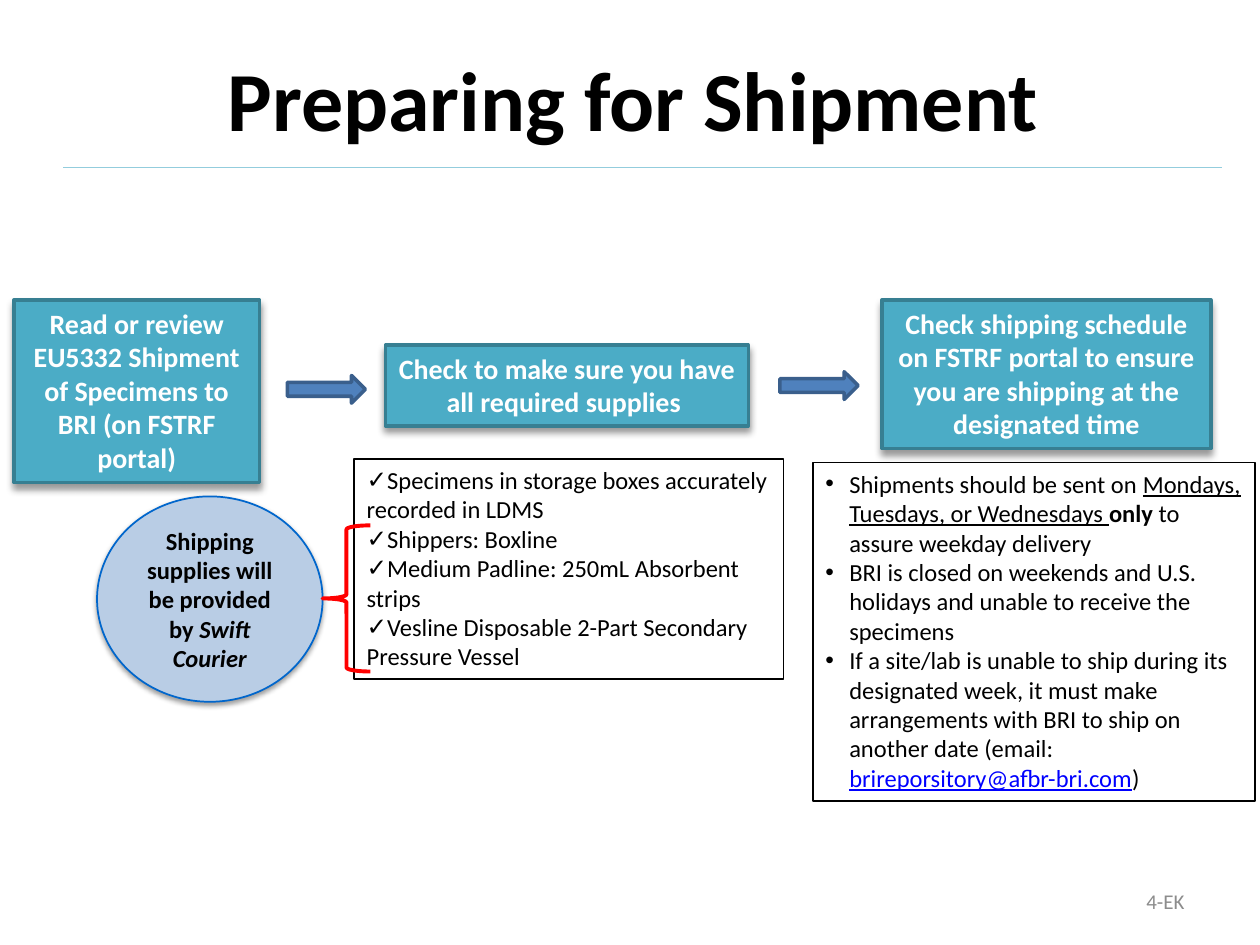
from lxml.etree import SubElement
from pptx import Presentation
from pptx.dml.color import RGBColor
from pptx.enum.dml import MSO_LINE
from pptx.enum.shapes import MSO_CONNECTOR, MSO_SHAPE
from pptx.enum.text import MSO_ANCHOR, MSO_AUTO_SIZE, PP_ALIGN
from pptx.oxml.ns import qn
from pptx.util import Inches, Pt

WIDTH, HEIGHT = Inches(10), Inches(7.5)
COLUMNS, ROWS = 100, 75
COLORS = {
    "text": "000000", "light": "FFFFFF", "muted": "8C8C8C", "link": "0000FF",
    "step": "4BACC6", "step_edge": "377F92", "arrow": "4F81BD", "arrow_edge": "3A5F8C",
    "note": "B9CDE5", "note_edge": "0066CC", "rule": "93CDDD", "brace": "FF0000",
}

STEPS = [
    ((1.1, 23.8, 19.5, 14.5),
     "Read or review EU5332 Shipment of Specimens to BRI (on FSTRF portal)"),
    ((30.6, 27.4, 28.8, 6.4), "Check to make sure you have all required supplies "),
    ((70, 23.8, 26.1, 11.8),
     "Check shipping schedule on FSTRF portal to ensure you are shipping at the designated time"),
]
ARROWS = [(22.8, 29.8, 6.2, 2.2), (61.9, 29.5, 6.2, 2.2)]
SUPPLIES = [
    [("Specimens in storage boxes accurately recorded in LDMS", {})],
    [("Shippers: Boxline", {})],
    [("Medium Padline: 250mL Absorbent strips", {})],
    [("Vesline Disposable 2-Part Secondary Pressure Vessel", {})],
]
SCHEDULE = [
    [("Shipments should be sent on ", {}),
     ("Mondays, Tuesdays, or Wednesdays ", {"underline": True}),
     ("only", {"bold": True}),
     (" to assure weekday delivery", {})],
    [("BRI is closed on weekends and U.S. holidays and unable to receive the specimens", {})],
    [("If a site/lab is unable to ship during its designated week, it must make "
      "arrangements with BRI to ship on another date (email: ", {}),
     ("brireporsitory@afbr-bri.com", {"underline": True, "color": "link"}),
     (")", {})],
]
COURIER_NOTE = [
    ("Shipping supplies will be provided by ", {"bold": True}),
    ("Swift Courier", {"bold": True, "italic": True}),
]


def rgb(name):
    return RGBColor.from_string(COLORS[name])


def grid(column, row, columns, rows):
    """Turn grid units into left, top, width and height."""
    across, down = WIDTH / COLUMNS, HEIGHT / ROWS
    return (int(column * across), int(row * down),
            int(columns * across), int(rows * down))


def move(placeholder, cell):
    (placeholder.left, placeholder.top,
     placeholder.width, placeholder.height) = grid(*cell)


def outline(element, color, weight):
    element.line.color.rgb = rgb(color)
    element.line.width = Pt(weight)
    element.line.dash_style = MSO_LINE.SOLID


def write(paragraph, runs, size, color="text", align=PP_ALIGN.LEFT):
    paragraph.alignment = align
    paragraph.space_before = Pt(0)
    for words, style in runs:
        run = paragraph.add_run()
        run.text = words
        font = run.font
        font.name, font.size = "Calibri", Pt(size)
        font.bold = style.get("bold", False)
        font.italic = style.get("italic", False)
        font.underline = style.get("underline", False)
        font.color.rgb = rgb(style.get("color", color))


def set_bullet(paragraph, mark, hanging):
    properties = paragraph._p.get_or_add_pPr()
    properties.set("marL", str(Inches(hanging)))
    properties.set("indent", str(-Inches(hanging)))
    SubElement(properties, qn("a:buFont"), typeface="Arial")
    SubElement(properties, qn("a:buChar"), char=mark)


def cast_shadow(shape, blur, distance, opacity):
    """Add a soft black shadow straight below the shape."""
    effects = shape._element.spPr.find(qn("a:effectLst"))
    shadow = SubElement(effects, qn("a:outerShdw"), blurRad=str(Pt(blur)),
                        dist=str(Pt(distance)), dir="5400000", rotWithShape="0")
    black = SubElement(shadow, qn("a:srgbClr"), val="000000")
    SubElement(black, qn("a:alpha"), val=str(opacity * 1000))


def add_figure(slide, preset, cell, fill, edge, weight):
    figure = slide.shapes.add_shape(preset, *grid(*cell))
    figure.shadow.inherit = False
    if fill:
        figure.fill.solid()
        figure.fill.fore_color.rgb = rgb(fill)
    else:
        figure.fill.background()
    outline(figure, edge, weight)
    return figure


def add_step(slide, cell, words):
    step = add_figure(slide, MSO_SHAPE.RECTANGLE, cell, "step", "step_edge", 2)
    cast_shadow(step, 4, 3, 40)
    step.text_frame.vertical_anchor = MSO_ANCHOR.TOP
    write(step.text_frame.paragraphs[0], [(words, {"bold": True})], 16,
          "light", PP_ALIGN.CENTER)


def add_courier_note(slide):
    note = add_figure(slide, MSO_SHAPE.OVAL, (7.7, 39.4, 17.9, 16.3), "note", "note_edge", 1)
    cast_shadow(note, 3.1, 1.6, 38)
    note.text_frame.vertical_anchor = MSO_ANCHOR.MIDDLE
    write(note.text_frame.paragraphs[0], COURIER_NOTE, 14, align=PP_ALIGN.CENTER)


def fill_title(title):
    move(title, (5, 3.3, 92, 9.1))
    title.text_frame.auto_size = MSO_AUTO_SIZE.NONE
    title.text_frame.vertical_anchor = MSO_ANCHOR.TOP
    write(title.text_frame.paragraphs[0], [("Preparing for Shipment ", {"bold": True})],
          48, align=PP_ALIGN.CENTER)


def fill_list(body, cell, items, mark, hanging):
    move(body, cell)
    outline(body, "text", 1)
    frame = body.text_frame
    frame.auto_size = MSO_AUTO_SIZE.NONE
    for index, runs in enumerate(items):
        paragraph = frame.add_paragraph() if index else frame.paragraphs[0]
        set_bullet(paragraph, mark, hanging)
        write(paragraph, runs, 14)


def add_title_rule(slide):
    left, top, width, _ = grid(5, 13.3, 92, 0)
    rule = slide.shapes.add_connector(MSO_CONNECTOR.STRAIGHT, left, top, left + width, top)
    outline(rule, "rule", 1)
    SubElement(rule._element.spPr, qn("a:effectLst"))


def add_page_label(slide):
    label = slide.shapes.add_textbox(*grid(71.7, 69.5, 23.3, 4)).text_frame
    label.word_wrap = True
    label.vertical_anchor = MSO_ANCHOR.MIDDLE
    write(label.paragraphs[0], [("4-EK", {})], 12, "muted", PP_ALIGN.RIGHT)


def main():
    deck = Presentation()
    deck.slide_width, deck.slide_height = WIDTH, HEIGHT
    slide = deck.slides.add_slide(deck.slide_layouts.get_by_name("Two Content"))
    title, supplies, schedule = slide.placeholders

    fill_title(title)
    add_title_rule(slide)
    fill_list(supplies, (28.1, 36.4, 34.1, 17.5), SUPPLIES, "✓", 0)
    fill_list(schedule, (64.5, 36.7, 35.1, 26.9), SCHEDULE, "•", 0.19)
    for cell, words in STEPS:
        add_step(slide, cell, words)
    for cell in ARROWS:
        add_figure(slide, MSO_SHAPE.RIGHT_ARROW, cell, "arrow", "arrow_edge", 2)
    add_courier_note(slide)
    add_figure(slide, MSO_SHAPE.LEFT_BRACE, (25.6, 41.7, 3.8, 11.6), None, "brace", 2.25)
    add_page_label(slide)

    deck.save("out.pptx")


if __name__ == "__main__":
    main()
